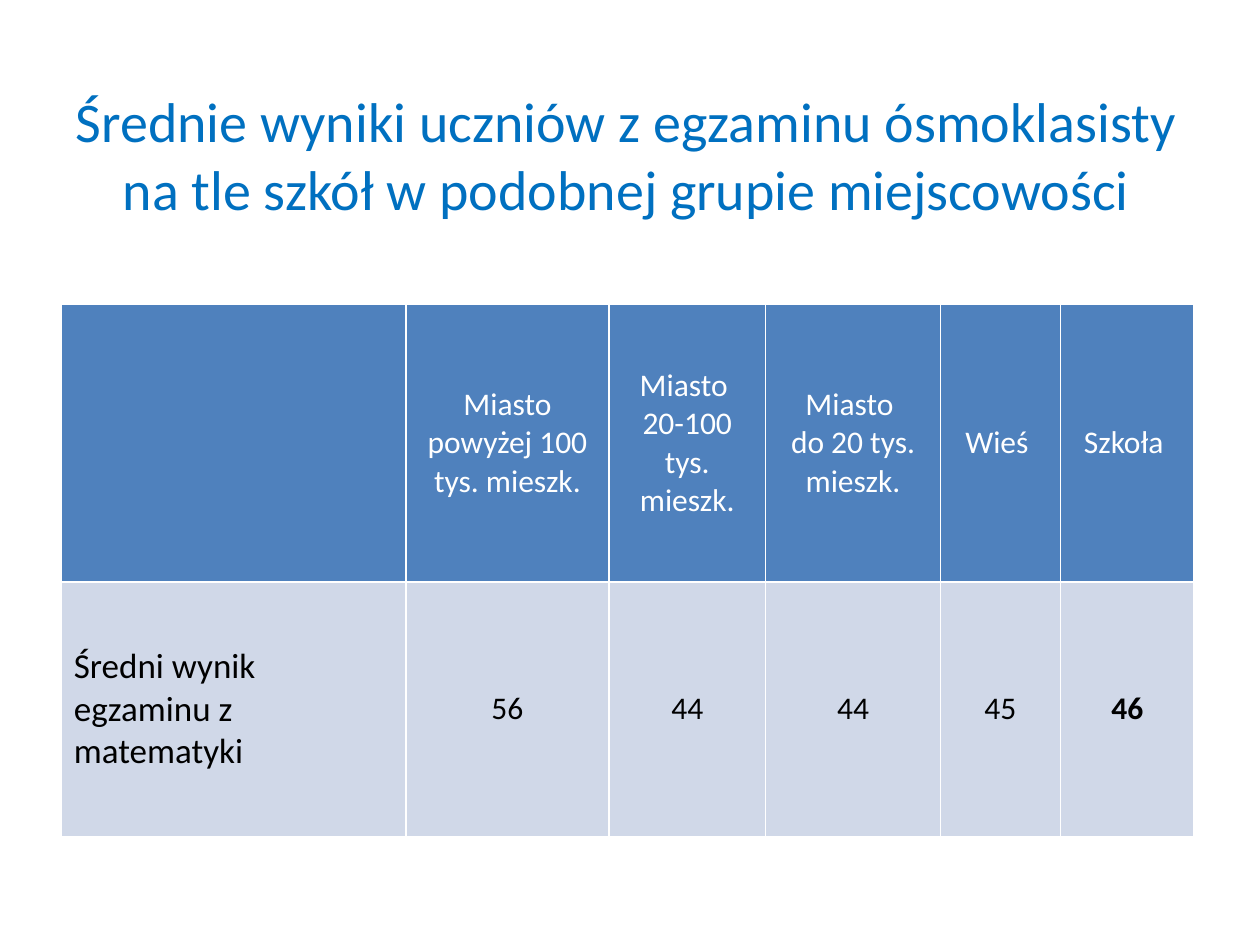
from lxml import etree
from pptx import Presentation
from pptx.dml.color import RGBColor
from pptx.enum.text import MSO_ANCHOR, PP_ALIGN
from pptx.oxml.ns import qn
from pptx.util import Pt

MIDDLE = MSO_ANCHOR.MIDDLE
LEFT, CENTER = PP_ALIGN.LEFT, PP_ALIGN.CENTER
BLANK_LAYOUT = 6
COLORS = {
    "title": "0070C0",
    "header": "4F81BD",
    "body": "D0D8E8",
    "white": "FFFFFF",
    "black": "000000",
}
COLUMN_WIDTHS = [197, 116, 89.5, 100, 68.5, 76.5]
ROW_HEIGHTS = [158.5, 145.5]
HEADINGS = [
    "",
    "Miasto powyżej 100 tys. mieszk.",
    "Miasto \n20-100 tys. mieszk.",
    "Miasto \ndo 20 tys. mieszk.",
    "Wieś ",
    "Szkoła ",
]
RESULTS = ["Średni wynik egzaminu z matematyki", "56", "44", "44", "45", "46"]


def write_text(frame, text, size=18, color="black", bold=False, align=CENTER):
    """Fill the first paragraph; a newline in the text becomes a line break."""
    para = frame.paragraphs[0]
    para.text = text
    para.alignment = align
    for span in para.runs:
        span.font.name = "Calibri"
        span.font.size = Pt(size)
        span.font.bold = bold
        span.font.color.rgb = RGBColor.from_string(COLORS[color])


def set_borders(cell, color, width):
    """Draw all four cell edges; they must precede the fill in the XML."""
    properties = cell._tc.get_or_add_tcPr()
    for position, edge in enumerate(("a:lnL", "a:lnR", "a:lnT", "a:lnB")):
        line = etree.Element(qn(edge), w=str(Pt(width)))
        fill = etree.SubElement(line, qn("a:solidFill"))
        etree.SubElement(fill, qn("a:srgbClr"), val=COLORS[color])
        properties.insert(position, line)


class SlideBuilder:
    """Holds the shared style and the current page."""

    border_color = "white"
    border_width = 1

    def __init__(self, page):
        self.page = page

    def add_title(self, text, left, top, width, height):
        box = self.page.shapes.add_textbox(Pt(left), Pt(top), Pt(width), Pt(height))
        box.text_frame.word_wrap = True
        box.text_frame.vertical_anchor = MIDDLE
        write_text(box.text_frame, text, size=32, color="title")

    def add_table(self, left, top, widths, heights):
        frame = self.page.shapes.add_table(
            len(heights), len(widths),
            Pt(left), Pt(top), Pt(sum(widths)), Pt(sum(heights)),
        )
        table = frame.table
        for column, width in zip(table.columns, widths):
            column.width = Pt(width)
        for row, height in zip(table.rows, heights):
            row.height = Pt(height)
        return table

    def fill_cell(self, cell, text, fill, **text_format):
        cell.vertical_anchor = MIDDLE
        cell.fill.solid()
        cell.fill.fore_color.rgb = RGBColor.from_string(COLORS[fill])
        set_borders(cell, self.border_color, self.border_width)
        write_text(cell.text_frame, text, **text_format)


def main():
    deck = Presentation()
    deck.slide_width, deck.slide_height = Pt(720), Pt(540)
    builder = SlideBuilder(deck.slides.add_slide(deck.slide_layouts[BLANK_LAYOUT]))

    builder.add_title(
        "Średnie wyniki uczniów z egzaminu ósmoklasisty "
        "na tle szkół w podobnej grupie miejscowości",
        34, 43, 648, 90,
    )
    table = builder.add_table(35, 174, COLUMN_WIDTHS, ROW_HEIGHTS)
    for column, heading in enumerate(HEADINGS):
        builder.fill_cell(table.cell(0, column), heading, "header", color="white")

    label, *scores = RESULTS
    builder.fill_cell(table.cell(1, 0), label, "body", size=20, align=LEFT)
    for column, score in enumerate(scores, start=1):
        is_school = column == len(scores)
        builder.fill_cell(table.cell(1, column), score, "body", bold=is_school)

    deck.save("out.pptx")


if __name__ == "__main__":
    main()
